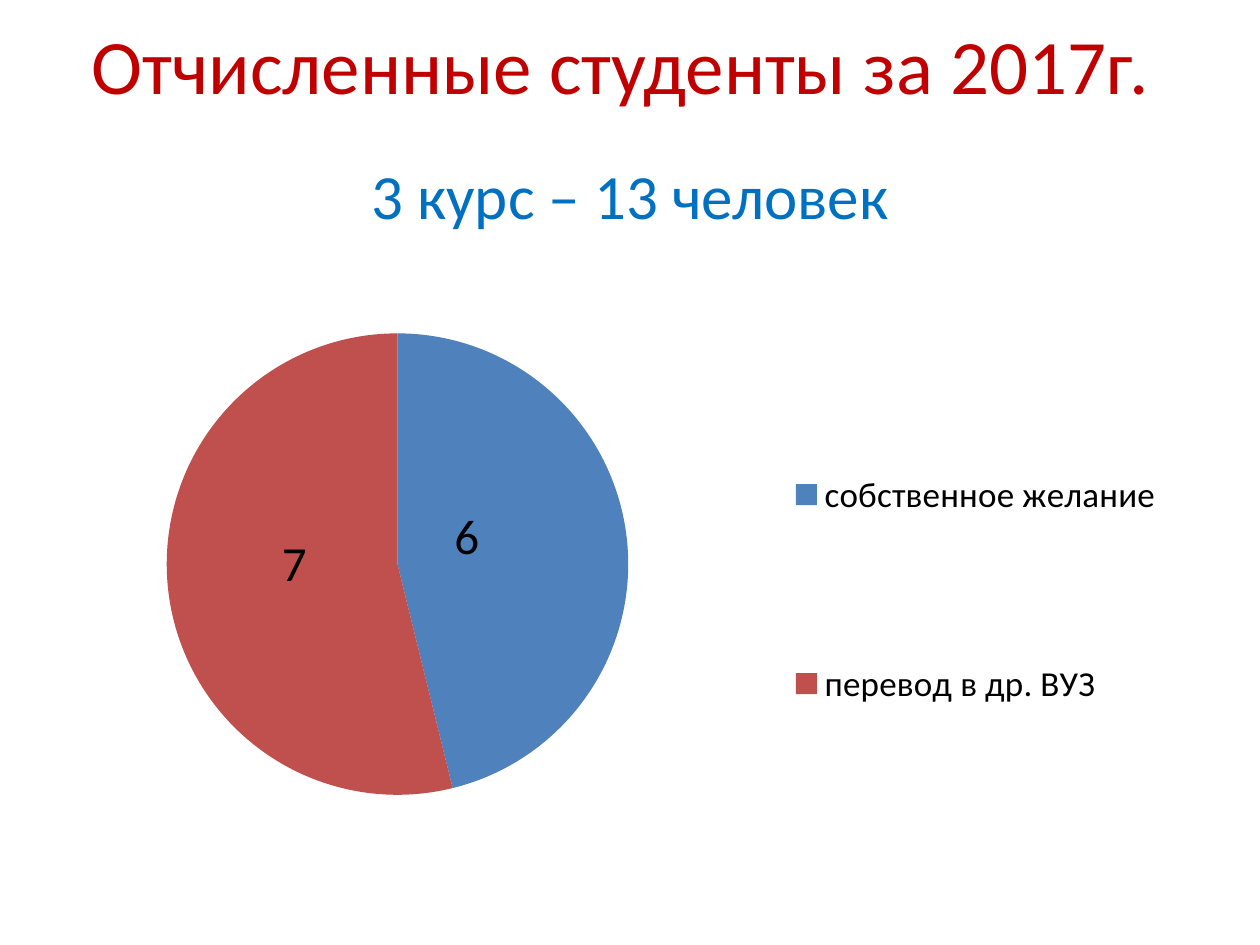
from lxml import etree
from pptx import Presentation
from pptx import util as u
from pptx.chart import data
from pptx.dml.color import RGBColor
from pptx.enum import chart as charts, text
from pptx.oxml import ns

WIDTH, HEIGHT = u.Inches(10), u.Inches(7.5)
RED = RGBColor(0xC0, 0x00, 0x00)
BLUE = RGBColor(0x00, 0x70, 0xC0)
BLACK = RGBColor(0x00, 0x00, 0x00)
SLICE_COLORS = [RGBColor(0x4F, 0x81, 0xBD), RGBColor(0xC0, 0x50, 0x4D)]
LABEL_SHIFTS = [{"x": -0.04, "y": -0.02}, {"x": 0.01, "y": -0.02}]
REASONS = {"собственное желание": 6, "перевод в др. ВУЗ": 7}


def share_box(left, top, width, height):
    """Turn shares of the slide into a box of lengths."""
    return [round(share * side) for share, side in
            zip((left, top, width, height), (WIDTH, HEIGHT, WIDTH, HEIGHT))]


def set_format(target, values):
    """Set attributes of an object from a dict."""
    for name, value in values.items():
        setattr(target, name, value)


def set_font(font, size, color):
    """Apply the slide font in a size and colour."""
    set_format(font, {"name": "Calibri", "size": u.Pt(size), "bold": False})
    font.color.rgb = color


def set_layout(parent, index, values):
    """Give a chart part a manual layout as shares of the chart."""
    for old in parent.findall(ns.qn("c:layout")):
        parent.remove(old)
    layout = etree.Element(ns.qn("c:layout"))
    manual = etree.SubElement(layout, ns.qn("c:manualLayout"))
    for name, value in values.items():
        etree.SubElement(manual, ns.qn(f"c:{name}")).set("val", str(value))
    parent.insert(index, layout)


def add_heading(shape, box, wording, size, color):
    """Place one centred line of heading in a box."""
    set_format(shape, dict(zip(("left", "top", "width", "height"), box)))
    frame = shape.text_frame
    set_format(frame, {"text": wording, "word_wrap": True,
                       "auto_size": text.MSO_AUTO_SIZE.NONE,
                       "vertical_anchor": text.MSO_ANCHOR.MIDDLE})
    paragraph = frame.paragraphs[0]
    paragraph.alignment = text.PP_ALIGN.CENTER
    set_font(paragraph.runs[0].font, size, color)


def add_reasons_chart(slide, box):
    """Add the pie of reasons with its legend."""
    chart_data = data.CategoryChartData()
    chart_data.categories = REASONS.keys()
    chart_data.add_series("Series 1", REASONS.values())
    chart = slide.shapes.add_chart(charts.XL_CHART_TYPE.PIE, *box, chart_data).chart
    set_format(chart, {"has_title": False, "has_legend": True})
    set_font(chart.font, 18, BLACK)
    plot = chart.plots[0]
    plot.vary_by_categories = True
    fixed = {"xMode": "edge", "yMode": "edge"}
    set_layout(chart._chartSpace.chart.plotArea, 0,
               {"layoutTarget": "inner", **fixed,
                "x": 0.02, "y": 0.08, "w": 0.55, "h": 0.74})

    set_format(chart.legend, {"position": charts.XL_LEGEND_POSITION.RIGHT,
                              "include_in_layout": False})
    set_font(chart.legend.font, 20, BLACK)
    set_layout(chart.legend._element, 1,
               {**fixed, "x": 0.62, "y": 0.07, "w": 0.37, "h": 0.84})

    plot.has_data_labels = True
    plot.data_labels.show_value = True
    set_font(plot.data_labels.font, 28, BLACK)
    for index, (color, shift) in enumerate(zip(SLICE_COLORS, LABEL_SHIFTS)):
        point = plot.series[0].points[index]
        point.format.fill.solid()
        point.format.fill.fore_color.rgb = color
        label = point.data_label
        set_font(label.font, 28, BLACK)
        label.position = charts.XL_LABEL_POSITION.CENTER
        set_layout(label.font._element.getparent().getparent().getparent().getparent(),
                   1, shift)


def build_slide(presentation):
    """Add the slide on students who left."""
    slide = presentation.slides.add_slide(presentation.slide_layouts[5])
    add_heading(slide.shapes.title, share_box(0.05, 0.005, 0.9, 0.125),
                "Отчисленные студенты за 2017г. ", 44, RED)
    add_reasons_chart(slide, share_box(0.05, 0.3, 0.9, 0.66))
    box = share_box(0.05, 0.143, 0.9, 0.125)
    add_heading(slide.shapes.add_textbox(*box), box, "3 курс – 13 человек", 36, BLUE)


def main():
    """Build and save the presentation."""
    presentation = Presentation()
    set_format(presentation, {"slide_width": WIDTH, "slide_height": HEIGHT})
    build_slide(presentation)
    presentation.save("out.pptx")


if __name__ == "__main__":
    main()
